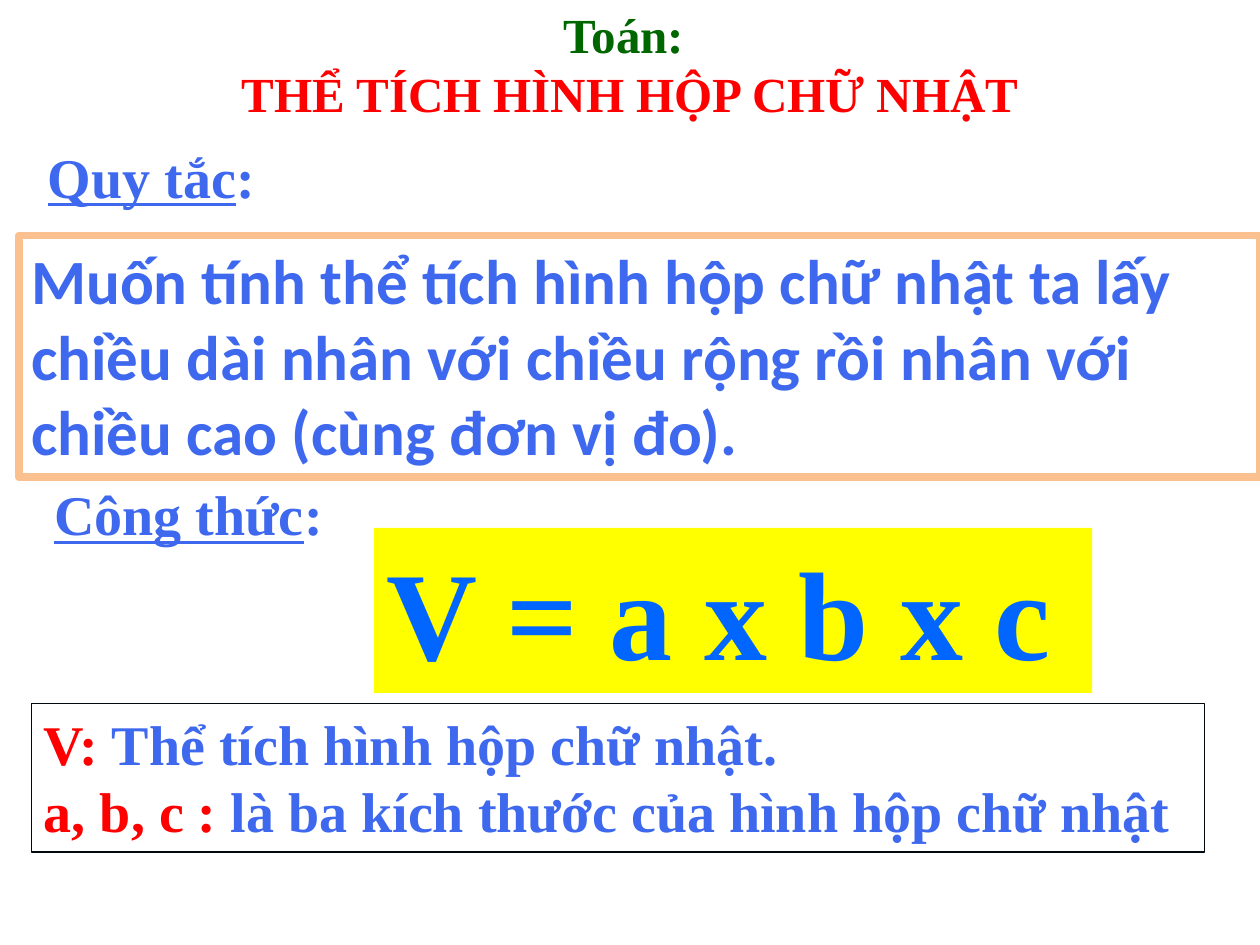
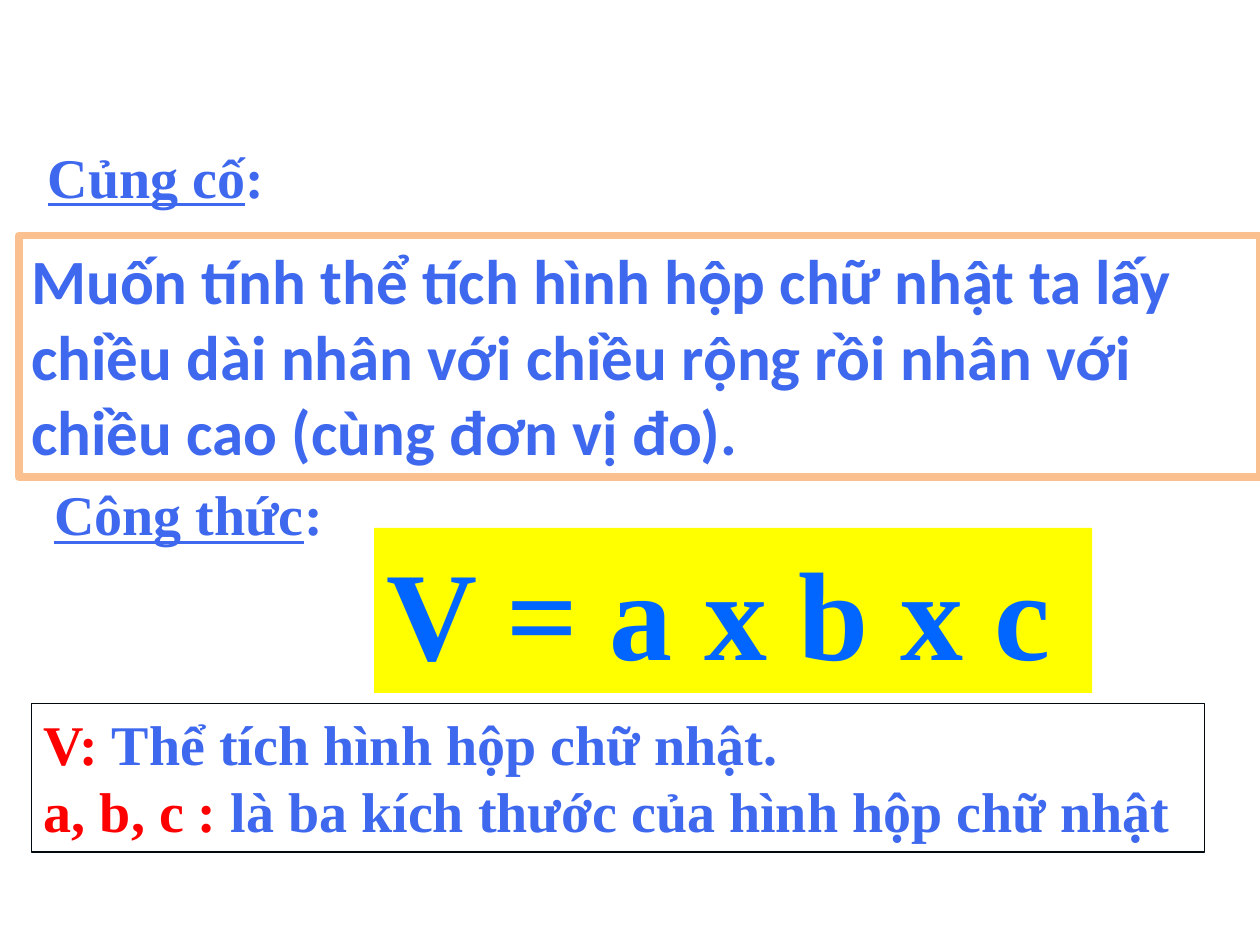
"""Build two slides on the volume of a rectangular box."""
from lxml.etree import SubElement
from pptx import Presentation
from pptx.dml.color import RGBColor
from pptx.enum.shapes import MSO_SHAPE
from pptx.enum.text import MSO_ANCHOR, MSO_AUTO_SIZE, PP_ALIGN
from pptx.oxml.ns import qn
from pptx.util import Pt

COLORS = {
    "blue": "3E68EE",
    "formula": "0066FF",
    "red": "FF0000",
    "green": "006600",
    "yellow": "FFFF00",
    "white": "FFFFFF",
    "peach": "FAC090",
    "ink": "000810",
}
SERIF = "Times New Roman"


def color(name):
    return RGBColor.from_string(COLORS[name])


def add_text(slide, paragraphs, at, size=32, font=SERIF, align=PP_ALIGN.LEFT, wrap=True,
             boxed=False, fill=None, line=None, line_width=0.75, spaced=False):
    """Write paragraphs of (text, colour, underline) runs in a text box or a rectangle."""
    frame = [Pt(length) for length in at]
    if boxed:
        shape = slide.shapes.add_shape(MSO_SHAPE.RECTANGLE, *frame)
        shape.shadow.inherit = False
    else:
        shape = slide.shapes.add_textbox(*frame)
    if fill:
        shape.fill.solid()
        shape.fill.fore_color.rgb = color(fill)
    else:
        shape.fill.background()
    if line:
        shape.line.color.rgb = color(line)
        shape.line.width = Pt(line_width)
    else:
        shape.line.fill.background()
    body = shape.text_frame
    body.word_wrap = wrap
    body.auto_size = MSO_AUTO_SIZE.SHAPE_TO_FIT_TEXT
    body.vertical_anchor = MSO_ANCHOR.TOP
    for index, runs in enumerate(paragraphs):
        paragraph = body.add_paragraph() if index else body.paragraphs[0]
        paragraph.alignment = align
        if spaced:
            before = SubElement(paragraph._p.get_or_add_pPr(), qn("a:spcBef"))
            SubElement(before, qn("a:spcPct")).set("val", "50000")
        for text, ink, underline in runs:
            run = paragraph.add_run()
            run.text = text
            run.font.name = font
            run.font.size = Pt(size)
            run.font.bold = True
            run.font.underline = underline
            run.font.color.rgb = color(ink)


deck = Presentation()
deck.slide_width, deck.slide_height = Pt(720), Pt(540)

formula = [[("V = a x b x c", "formula", False)]]
legend = [
    [("V: ", "red", False), ("Thể tích hình hộp chữ nhật.", "blue", False)],
    [("a, b, c : ", "red", False), ("là ba kích thước của hình hộp chữ nhật", "blue", False)],
]
rule = [[("Muốn tính thể tích hình hộp chữ nhật ta lấy chiều dài nhân với chiều rộng "
          "rồi nhân với chiều cao (cùng đơn vị đo).", "blue", False)]]
lesson_title = [[("Toán: ", "green", False)], [("THỂ TÍCH HÌNH HỘP CHỮ NHẬT", "red", False)]]

for rule_heading, lesson in [("Quy tắc", lesson_title), ("Củng cố", None)]:
    slide = deck.slides.add_slide(deck.slide_layouts[6])
    add_text(slide, formula, (213.75, 301.6, 410.4, 94.3), size=72, boxed=True,
             fill="yellow", spaced=True)
    add_text(slide, legend, (18, 401.8, 670.3, 85), boxed=True, line="ink")
    add_text(slide, rule, (10.8, 134.6, 709.2, 138.2), size=36, font="Calibri", boxed=True,
             fill="white", line="peach", line_width=4.5, spaced=True)
    for heading, at, wrap in [(rule_heading, (20.2, 77.8, 184.3, 46), True),
                              ("Công thức", (23.8, 270.7, 177.8, 46), False)]:
        add_text(slide, [[(heading, "blue", True), (":", "blue", False)]], at, wrap=wrap)
    if lesson:
        add_text(slide, lesson, (0, -0.7, 720, 74.9), size=28, align=PP_ALIGN.CENTER)

deck.save("out.pptx")
